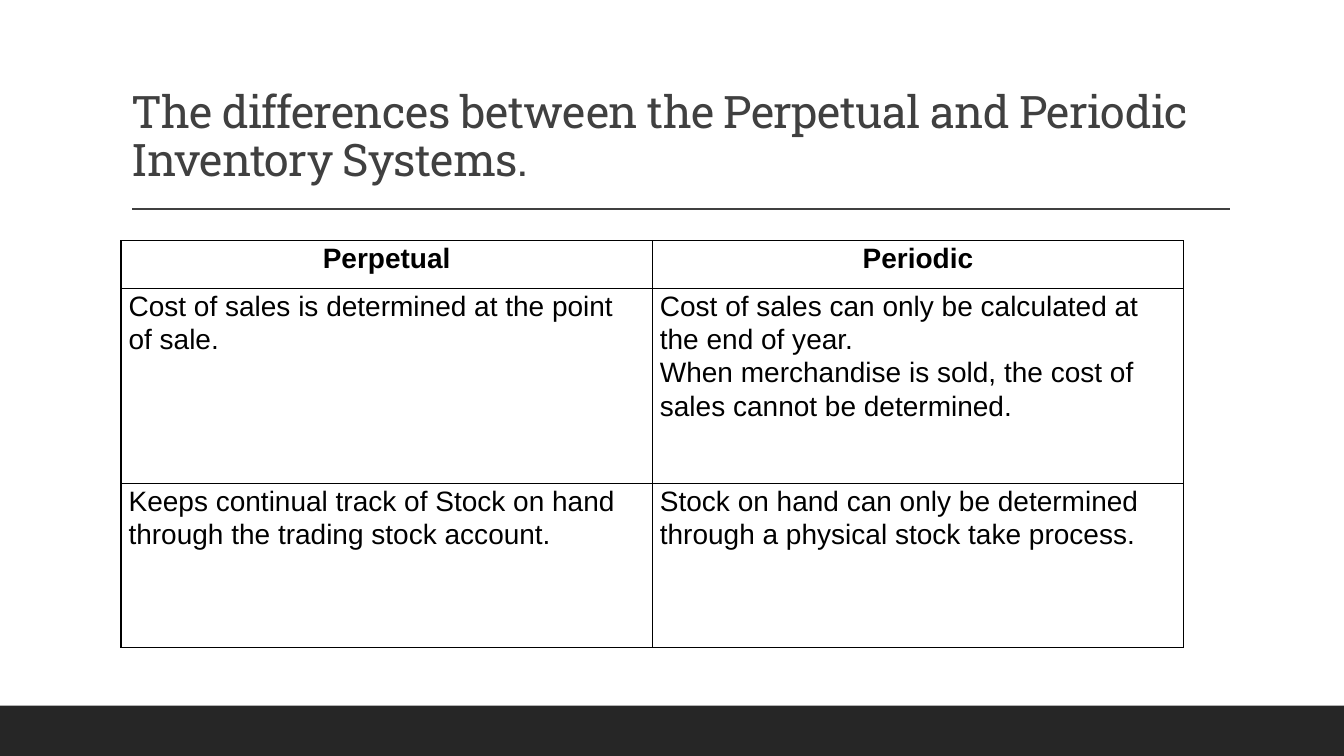
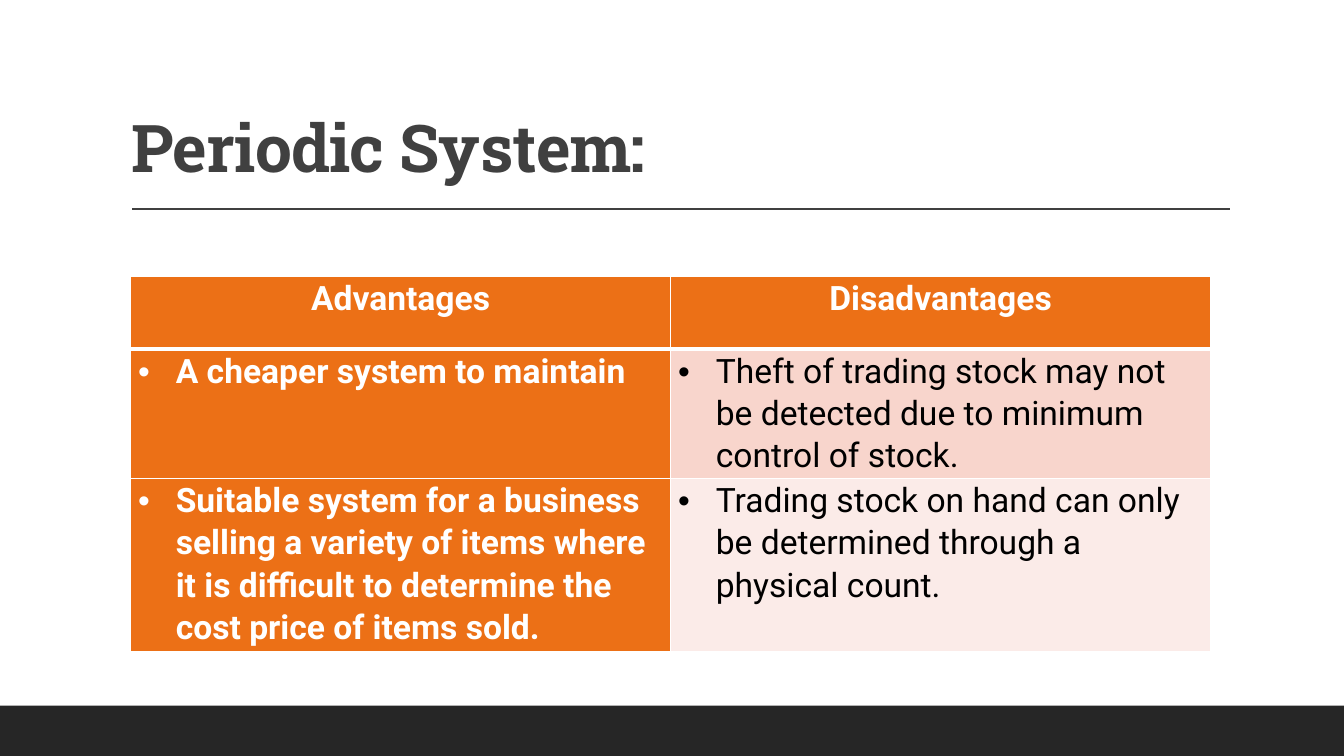
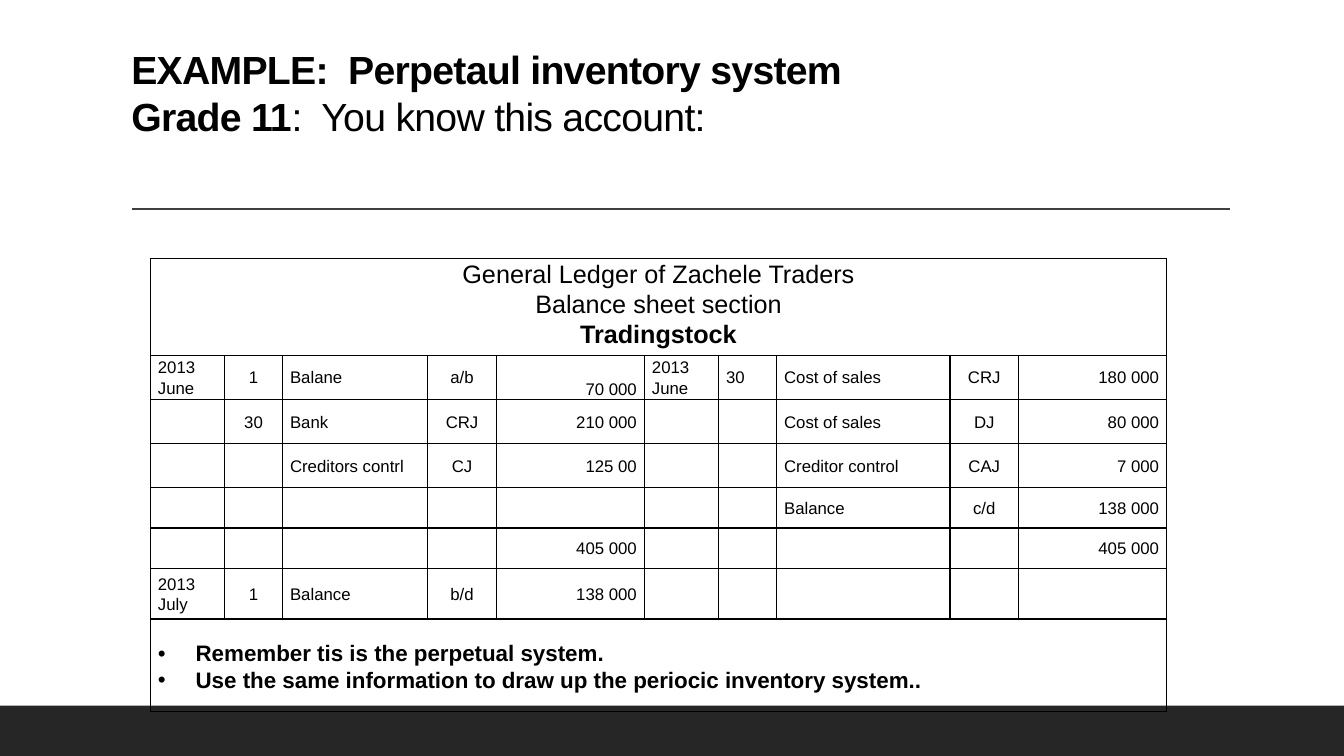
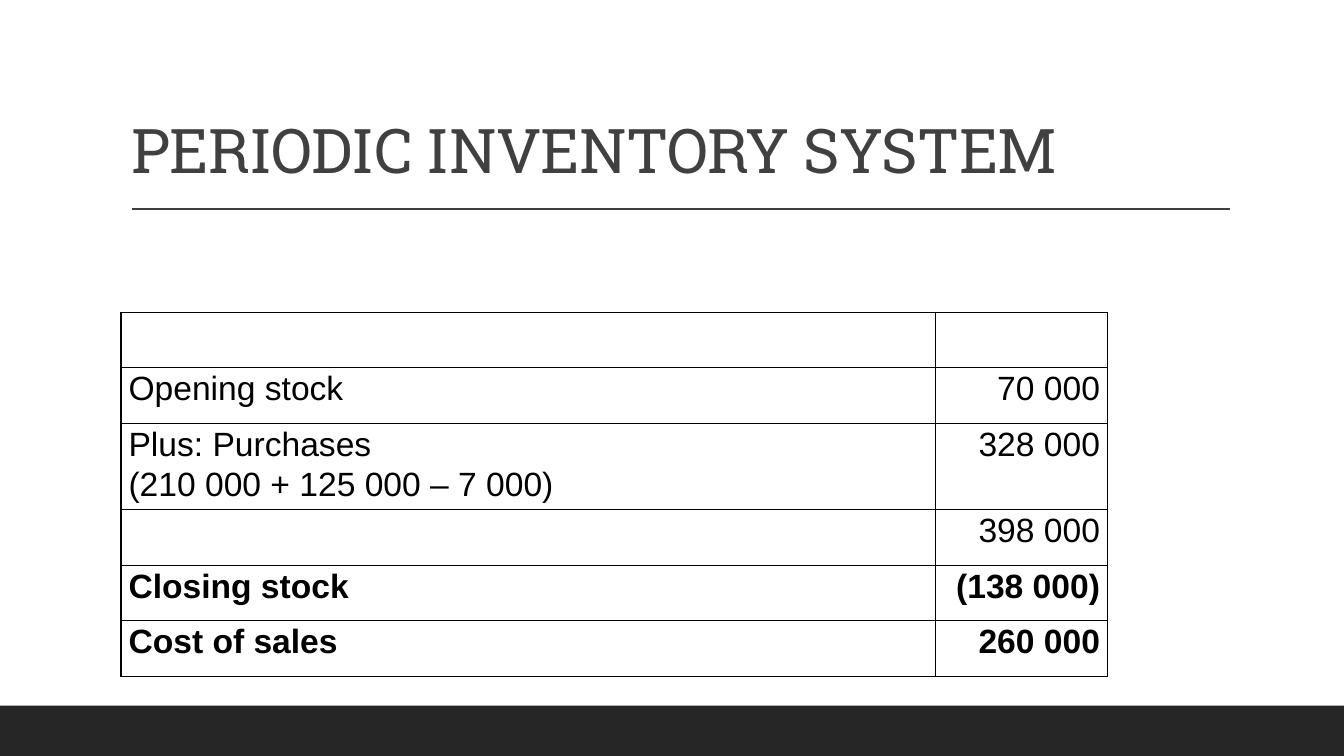
import pptx
import pptx.dml.color
import pptx.enum.shapes
import pptx.enum.text
import pptx.oxml
import pptx.oxml.ns
import pptx.util

Cm = pptx.util.Cm
Pt = pptx.util.Pt
ALIGN = pptx.enum.text.PP_ALIGN
ANCHOR = pptx.enum.text.MSO_ANCHOR
NAMESPACE = pptx.oxml.ns.nsdecls("a")

# Shared look
PAGE_WIDTH, PAGE_HEIGHT = 33.87, 19.05
BAND_HEIGHT = 1.27
RULE_LEFT, RULE_RIGHT, RULE_TOP = 3.33, 31, 5.27
TITLE_BOX = (3.06, 0.79, 27.94, 4.04)
INK, GREY, DARK, WHITE = "000000", "404040", "262626", "FFFFFF"
ORANGE, PINK, PALE = "EC7016", "F8D5CC", "FBEBE8"
ALIGNMENTS = {"l": ALIGN.LEFT, "c": ALIGN.CENTER, "r": ALIGN.RIGHT}
SIDES = "LRTB"


def color(value):
    return pptx.dml.color.RGBColor.from_string(value)


def add_span(para, text, size, font, ink, bold=False):
    span = para.add_run()
    span.text = text
    span.font.size = Pt(size)
    span.font.name = font
    span.font.bold = bold
    span.font.color.rgb = color(ink)
    return span


# Page parts
def add_page(deck):
    """Blank page with the bottom band and the rule below the title."""
    page = deck.slides.add_slide(deck.slide_layouts[6])
    band = page.shapes.add_shape(
        pptx.enum.shapes.MSO_SHAPE.RECTANGLE,
        Cm(0), Cm(PAGE_HEIGHT - BAND_HEIGHT), Cm(PAGE_WIDTH), Cm(BAND_HEIGHT))
    band.shadow.inherit = False
    band.fill.solid()
    band.fill.fore_color.rgb = color(DARK)
    band.line.fill.background()

    rule = page.shapes.add_connector(
        pptx.enum.shapes.MSO_CONNECTOR.STRAIGHT,
        Cm(RULE_LEFT), Cm(RULE_TOP), Cm(RULE_RIGHT), Cm(RULE_TOP))
    rule.line.color.rgb = color(GREY)
    rule.line.width = Pt(1)
    rule.element.spPr.append(
        pptx.oxml.parse_xml(f"<a:effectLst {NAMESPACE}/>"))
    return page


def add_title(page, lines, size, font="Roboto Slab", ink=GREY,
              box=TITLE_BOX, spacing=0.9):
    """Title at the foot of its box; each line is a list of (text, bold)."""
    frame = page.shapes.add_textbox(*map(Cm, box)).text_frame
    frame.word_wrap = True
    frame.vertical_anchor = ANCHOR.BOTTOM
    for number, line in enumerate(lines):
        para = frame.add_paragraph() if number else frame.paragraphs[0]
        para.line_spacing = spacing
        for text, bold in line:
            span = add_span(para, text, size, font, ink, bold)
            span.font._element.set("spc", "-50")


# Table parts
def set_border(cell, side, ink, width=1):
    """Draw one side of a cell, or clear it when there is no ink."""
    props = cell._tc.get_or_add_tcPr()
    old = props.find(pptx.oxml.ns.qn(f"a:ln{side}"))
    if old is not None:
        props.remove(old)
    paint = (f'<a:solidFill><a:srgbClr val="{ink}"/></a:solidFill>'
             if ink else "<a:noFill/>")
    props.insert(SIDES.index(side), pptx.oxml.parse_xml(
        f'<a:ln{side} {NAMESPACE} w="{Pt(width)}">{paint}</a:ln{side}>'))


def add_bullet(para):
    props = para._p.get_or_add_pPr()
    props.set("marL", str(Cm(0.95)))
    props.set("indent", str(-Cm(0.95)))
    for mark in ('buFont %s typeface="Arial"', 'buChar %s char="•"'):
        props.append(pptx.oxml.parse_xml(f"<a:{mark % NAMESPACE}/>"))


def fill_cell(cell, text, size, font="Arial", ink=INK, bold=False,
              align="l", bullet=False):
    """Write one paragraph for each line of the text."""
    for number, line in enumerate(text.split("\n") if text else []):
        frame = cell.text_frame
        para = frame.add_paragraph() if number else frame.paragraphs[0]
        para.alignment = ALIGNMENTS[align]
        para.line_spacing = 1.07
        para.space_before = para.space_after = Pt(0)
        if bullet:
            add_bullet(para)
        add_span(para, line, size, font, ink, bold)


def add_grid(page, left, top, widths, heights, ink=INK):
    """Empty table with plain cells and one border colour; rows may grow."""
    table = page.shapes.add_table(
        len(heights), len(widths), Cm(left), Cm(top),
        Cm(sum(widths)), Cm(sum(heights))).table
    table.first_row = table.horz_banding = False
    for column, width in zip(table.columns, widths):
        column.width = Cm(width)
    for row, height in zip(table.rows, heights):
        row.height = Cm(height)
    for cell in table.iter_cells():
        cell.margin_left = cell.margin_right = Cm(0.19)
        cell.margin_top = cell.margin_bottom = Cm(0)
        cell.fill.background()
        for side in SIDES:
            set_border(cell, side, ink)
    return table


def merge_row(table, row):
    first = table.cell(row, 0)
    first.merge(table.cell(row, len(table.columns) - 1))
    return first


# Slides
def add_differences(deck):
    page = add_page(deck)
    add_title(page, [[("The differences between the Perpetual and Periodic "
                       "Inventory Systems.", False)]], 32)
    rows = [
        ("Perpetual", "Periodic"),
        ("Cost of sales is determined at the point of sale.",
         "Cost of sales can only be calculated at the end of year.\n"
         "When merchandise is sold, the cost of sales cannot be determined."),
        ("Keeps continual track of Stock on hand through the trading stock "
         "account.",
         "Stock on hand can only be determined through a physical stock take "
         "process."),
    ]
    table = add_grid(page, 3.05, 6.07, [13.39] * 2, [1.2, 4.92, 4.13])
    for row, texts in enumerate(rows):
        heading = row == 0
        for column, text in enumerate(texts):
            cell = table.cell(row, column)
            if not heading:
                cell.margin_right = Cm(0.25)
            fill_cell(cell, text, 20, bold=heading,
                      align="c" if heading else "l")


def add_pros_and_cons(deck):
    page = add_page(deck)
    add_title(page, [[("Periodic System:", True)]], 47)
    rows = [
        ("Advantages", "Disadvantages"),
        ("A cheaper system to maintain",
         "Theft of trading stock may not be detected due to minimum control "
         "of stock."),
        ("Suitable system for a business selling a variety of items where it "
         "is difficult to determine the cost price of items sold.",
         "Trading stock on hand can only be determined through a physical "
         "count."),
    ]
    fills = [(ORANGE, ORANGE), (ORANGE, PINK), (ORANGE, PALE)]
    table = add_grid(page, 3.29, 6.97, [13.61] * 2, [1.83, 1.98, 1.98], WHITE)
    for row, texts in enumerate(rows):
        heading = row == 0
        for column, text in enumerate(texts):
            cell = table.cell(row, column)
            strong = fills[row][column] == ORANGE
            cell.fill.solid()
            cell.fill.fore_color.rgb = color(fills[row][column])
            fill_cell(cell, text, 24, "Roboto", WHITE if strong else INK,
                      strong, "c" if heading else "l", not heading)
            if heading:
                set_border(cell, "B", WHITE, 3)


def add_ledger(deck):
    page = add_page(deck)
    add_title(page, [[("EXAMPLE:  Perpetaul inventory system", True)],
                     [("Grade 11", True), (":  You know this account:", False)]],
              28, "Arial", INK, (3.06, 0.79, 27.94, 2.85), 1)
    entries = [
        ("2013\nJune", "1", "Balane", "a/b", "70 000",
         "2013\nJune", "30", "Cost of sales", "CRJ", "180 000"),
        ("", "30", "Bank", "CRJ", "210 000",
         "", "", "Cost of sales", "DJ", "80 000"),
        ("", "", "Creditors contrl", "CJ", "125 00",
         "", "", "Creditor control", "CAJ", "7 000"),
        ("", "", "", "", "", "", "", "Balance", "c/d", "138 000"),
        ("", "", "", "", "405 000", "", "", "", "", "405 000"),
        ("2013\nJuly", "1", "Balance", "b/d", "138 000", "", "", "", "", ""),
    ]
    table = add_grid(
        page, 3.79, 6.51,
        [1.87, 1.46, 3.66, 1.73, 3.73, 1.87, 1.46, 4.37, 1.73, 3.73],
        [1.68, 1.11, 1.11, 1.11, 1.02, 1.02, 1.27, 2.34])

    # Heading
    heading = merge_row(table, 0)
    fill_cell(heading, "General Ledger of Zachele Traders\n"
              "Balance sheet section\nTradingstock", 18, align="c")
    heading.text_frame.paragraphs[-1].runs[0].font.bold = True

    # Entries
    for row, texts in enumerate(entries, 1):
        for column, (text, align) in enumerate(zip(texts, "lclcrlllcr")):
            cell = table.cell(row, column)
            cell.vertical_anchor = ANCHOR.MIDDLE
            fill_cell(cell, text, 12, align=align)
    table.cell(1, 4).vertical_anchor = ANCHOR.BOTTOM

    # Reminder
    reminder = merge_row(table, len(entries) + 1)
    reminder.margin_top = Cm(0.52)
    fill_cell(reminder, "Remember tis is the perpetual system.\n"
              "Use the same information to draw up the periocic inventory "
              "system..", 16, bold=True, bullet=True)


def add_cost_of_sales(deck):
    page = add_page(deck)
    add_title(page, [[("PERIODIC INVENTORY SYSTEM", False)]], 44)
    rows = [
        ("", ""),
        ("Opening stock", "70 000"),
        ("Plus: Purchases\n(210 000 + 125 000 – 7 000)", "328 000"),
        ("", "398 000"),
        ("Closing stock", "(138 000)"),
        ("Cost of sales", "260 000"),
    ]
    table = add_grid(page, 3.05, 6.45, [20.52, 4.34],
                     [1.42, 1.4, 1.4, 1.47, 1.4, 1.4, 1.4])

    # Open heading row
    merge_row(table, 0)
    for column in range(len(table.columns)):
        for side in "LRT":
            set_border(table.cell(0, column), side, None)

    # Amounts
    for row, texts in enumerate(rows, 1):
        for column, (text, align) in enumerate(zip(texts, "lr")):
            fill_cell(table.cell(row, column), text, 24,
                      bold=row >= 5, align=align)


def main():
    deck = pptx.Presentation()
    deck.slide_width = Cm(PAGE_WIDTH)
    deck.slide_height = Cm(PAGE_HEIGHT)
    for add_slide in (add_differences, add_pros_and_cons, add_ledger,
                      add_cost_of_sales):
        add_slide(deck)
    deck.save("out.pptx")


if __name__ == "__main__":
    main()
